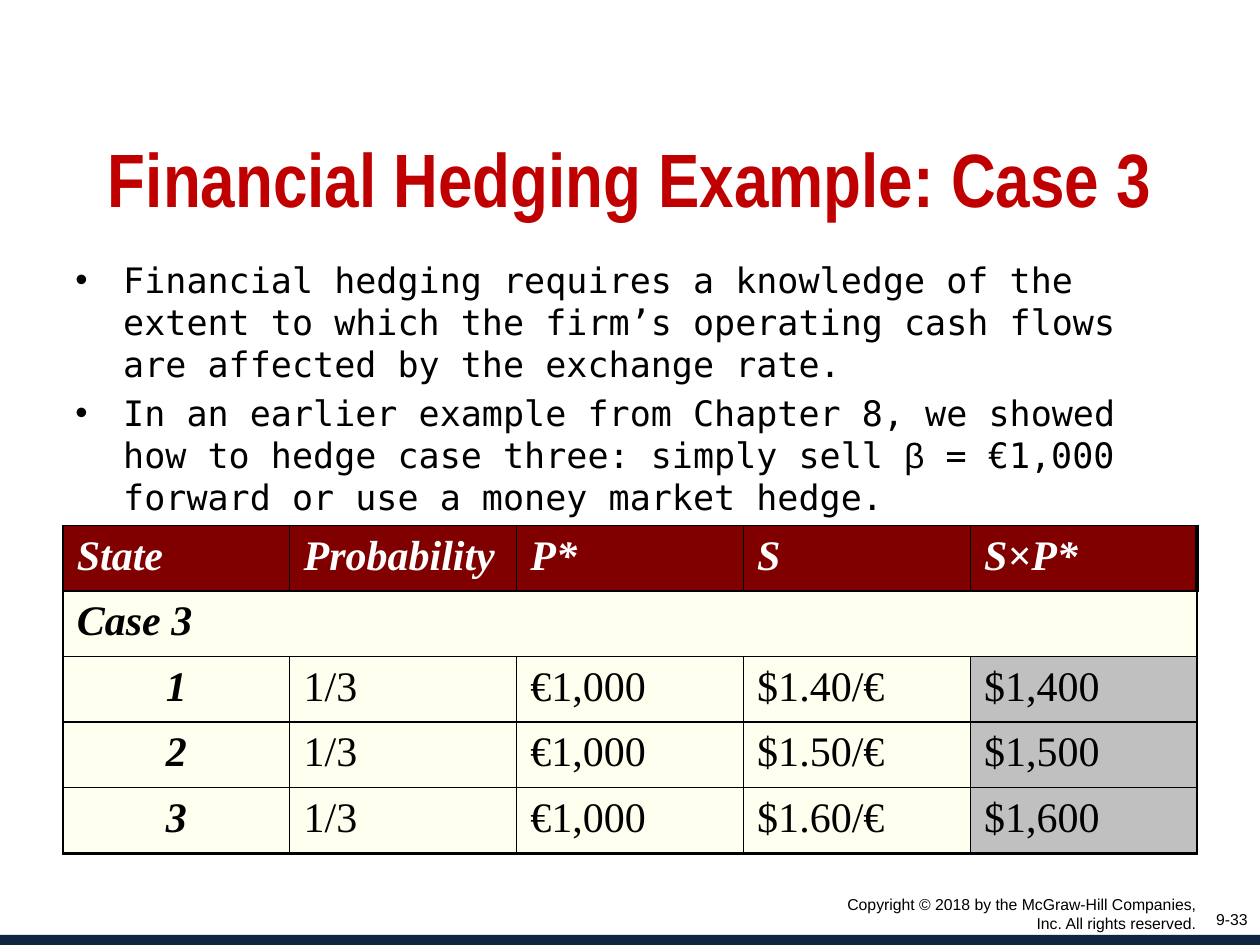
import pptx
import pptx.dml.color
import pptx.enum.shapes
import pptx.enum.text
import pptx.oxml
import pptx.oxml.ns
import pptx.util

BLACK = pptx.dml.color.RGBColor(0x00, 0x00, 0x00)
WHITE = pptx.dml.color.RGBColor(0xFF, 0xFF, 0xFF)
NAVY = pptx.dml.color.RGBColor(0x0F, 0x24, 0x3E)
RED = pptx.dml.color.RGBColor(0xC0, 0x00, 0x00)
MAROON = pptx.dml.color.RGBColor(0x80, 0x00, 0x00)
IVORY = pptx.dml.color.RGBColor(0xFF, 0xFF, 0xEF)
SILVER = pptx.dml.color.RGBColor(0xC0, 0xC0, 0xC0)
ALIGN = pptx.enum.text.PP_ALIGN

deck = pptx.Presentation()
deck.slide_width = pptx.util.Inches(10)
deck.slide_height = pptx.util.Inches(7.5)
COLUMN = deck.slide_width / 20
ROW = deck.slide_height / 30
slide = deck.slides.add_slide(deck.slide_layouts[6])


def area(left, top, width, height):
    return int(left * COLUMN), int(top * ROW), int(width * COLUMN), int(height * ROW)


def write(paragraph, pieces, size, color, align=ALIGN.LEFT, bold=False, italic=False):
    paragraph.alignment = align
    for words, face in pieces:
        run = paragraph.add_run()
        run.text = words
        look = {"name": face, "size": pptx.util.Pt(size), "bold": bold, "italic": italic}
        for attribute, value in look.items():
            setattr(run.font, attribute, value)
        run.font.color.rgb = color


footer_bar = slide.shapes.add_shape(
    pptx.enum.shapes.MSO_SHAPE.RECTANGLE, *area(0, 29.68, 20, 0.32))
footer_bar.shadow.inherit = False
footer_bar.fill.solid()
footer_bar.fill.fore_color.rgb = NAVY
footer_bar.line.fill.background()

title = slide.shapes.add_textbox(*area(1, 4, 18, 4.32)).text_frame
title.word_wrap = True
write(title.paragraphs[0], [("Financial Hedging Example: Case 3", "Arial Narrow")],
      43.2, RED, ALIGN.CENTER, bold=True)

MONO = "DejaVu Sans Mono"
points = [
    [("Financial hedging requires a knowledge of the extent to which the firm’s "
      "operating cash flows are affected by the exchange rate.", MONO)],
    [("In an earlier example from Chapter 8, we showed how to hedge case three: "
      "simply sell ", MONO),
     ("β", "Arial"),
     (" = €1,000 forward or use a money market hedge.", MONO)],
]
body = slide.shapes.add_textbox(*area(1, 8, 18, 10.32)).text_frame
body.word_wrap = True
hanging = pptx.util.Inches(0.38)
for number, pieces in enumerate(points):
    point = body.add_paragraph() if number else body.paragraphs[0]
    properties = point._p.get_or_add_pPr()
    properties.set("marL", str(hanging))
    properties.set("indent", str(-hanging))
    bullet_font = pptx.oxml.ns.nsdecls("a")
    properties.append(pptx.oxml.parse_xml(f'<a:buFont {bullet_font} typeface="Arial"/>'))
    properties.append(pptx.oxml.parse_xml(f'<a:buChar {bullet_font} char="•"/>'))
    point.space_before = pptx.util.Pt(4 * number)
    write(point, pieces, 20, BLACK)

states = [
    ["State", "Probability", "P*", "S", "S×P*"],
    ["Case 3", "", "", "", ""],
    ["1", "1/3", "€1,000", "$1.40/€", "$1,400"],
    ["2", "1/3", "€1,000", "$1.50/€", "$1,500"],
    ["3", "1/3", "€1,000", "$1.60/€", "$1,600"],
]
last = len(states) - 1
payoffs = slide.shapes.add_table(5, 5, *area(1, 16.68, 18, 10.32)).table
payoffs.cell(1, 0).merge(payoffs.cell(1, last))
margins = {
    "margin_left": pptx.util.Inches(0.11),
    "margin_right": pptx.util.Inches(0.11),
    "margin_top": pptx.util.Inches(0.06),
    "margin_bottom": pptx.util.Inches(0.06),
}
for r, values in enumerate(states):
    for c, value in enumerate(values):
        cell = payoffs.cell(r, c)
        for attribute, margin in margins.items():
            setattr(cell, attribute, margin)
        borders = {"lnL": 0.75, "lnR": 0.75, "lnT": 0.75, "lnB": 0.75}
        if r < 2 and c == last:
            borders["lnR"] = 2.25
        if r == last:
            borders["lnB"] = 2
        for side, points_wide in borders.items():
            cell._tc.get_or_add_tcPr().append(pptx.oxml.parse_xml(
                f'<a:{side} {pptx.oxml.ns.nsdecls("a")} w="{pptx.util.Pt(points_wide)}">'
                f'<a:solidFill><a:srgbClr val="{BLACK}"/></a:solidFill></a:{side}>'))
        cell.fill.solid()
        cell.fill.fore_color.rgb = MAROON if r == 0 else SILVER if r > 1 and c == last else IVORY
        if value:
            heading = r < 2 or c == 0
            write(cell.text_frame.paragraphs[0], [(value, "Times New Roman")], 24,
                  WHITE if r == 0 else BLACK,
                  ALIGN.CENTER if r > 1 and c == 0 else ALIGN.LEFT,
                  bold=heading, italic=heading)

footers = [
    ("9-33", area(19, 28.68, 1, 1.32), 0.05),
    ("Copyright © 2018 by the McGraw-Hill Companies, Inc. All rights reserved.",
     area(12.84, 28.32, 6.34, 1.68), 0.02),
]
for words, place, inset in footers:
    footer = slide.shapes.add_textbox(*place).text_frame
    footer.word_wrap = True
    footer.margin_top = pptx.util.Inches(inset)
    write(footer.paragraphs[0], [(words, "Arial")], 9, BLACK, ALIGN.RIGHT)

deck.save("out.pptx")
